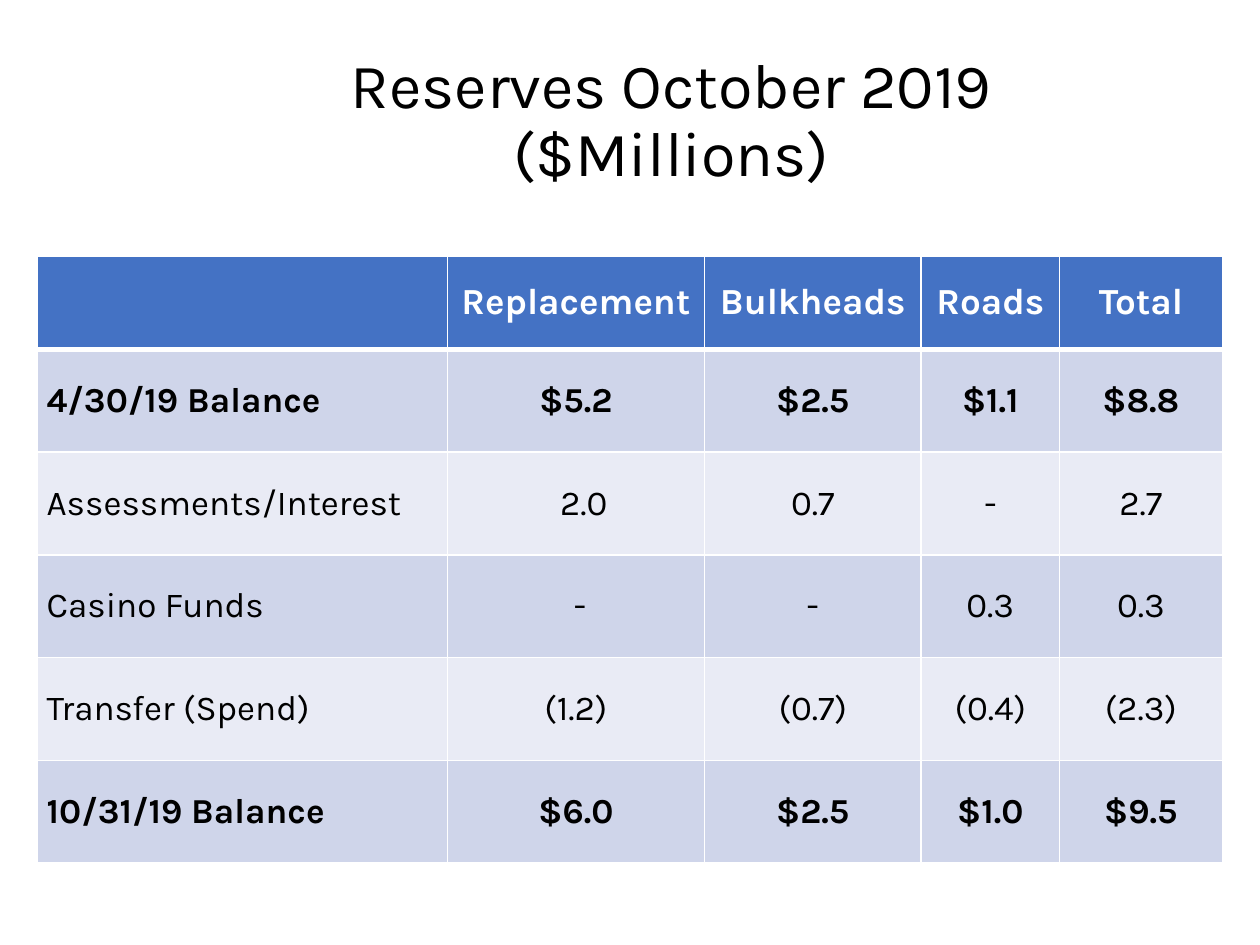
from dataclasses import dataclass

from lxml.etree import SubElement
from pptx import Presentation
from pptx.dml.color import RGBColor
from pptx.enum.text import MSO_ANCHOR, PP_ALIGN
from pptx.oxml.ns import qn
from pptx.util import Cm, Pt


@dataclass(frozen=True)
class Theme:
    font: str = "Karla"
    black: str = "000000"
    white: str = "FFFFFF"
    header: str = "4472C4"
    bands: tuple = ("E9EBF5", "CFD5EA")
    title_size: int = 36
    header_size: int = 21
    body_size: int = 20


THEME = Theme()

COLUMN_WIDTHS = (8.26, 5.18, 4.37, 2.79, 3.28)
HEADER_HEIGHT = 1.88
RESERVES = (
    ("", "Replacement", "Bulkheads", "Roads", "Total"),
    ("4/30/19 Balance", "$5.2", "$2.5", "$1.1", "$8.8"),
    ("Assessments/Interest", "2.0", "0.7", "-", "2.7"),
    ("Casino Funds", "-", "-", "0.3", "0.3"),
    ("Transfer (Spend)", "(1.2)", "(0.7)", "(0.4)", "(2.3)"),
    ("10/31/19 Balance", "$6.0", "$2.5", "$1.0", "$9.5"),
)
BALANCE_ROWS = (1, 5)
# Extra left margin in cm, by (row, column)
NUDGES = {(2, 1): 0.32, (3, 1): 0.16}


def style_paragraph(p, size, color, align, bold=False):
    p.alignment = align
    p.font.name = THEME.font
    p.font.size = Pt(size)
    p.font.bold = bold
    p.font.color.rgb = RGBColor.from_string(color)


def add_title(slide, left, top, width, height, text):
    tf = slide.shapes.add_textbox(Cm(left), Cm(top), Cm(width), Cm(height)).text_frame
    tf.word_wrap = True
    tf.vertical_anchor = MSO_ANCHOR.MIDDLE
    p = tf.paragraphs[0]
    p.text = text
    p.line_spacing = 0.9
    style_paragraph(p, THEME.title_size, THEME.black, PP_ALIGN.CENTER)


def set_borders(cell, top, bottom):
    """Draw white borders; top and bottom are widths in points, the sides 1."""
    tc_pr = cell._tc.get_or_add_tcPr()
    for side, width in (("L", 1), ("R", 1), ("T", top), ("B", bottom)):
        line = SubElement(tc_pr, qn(f"a:ln{side}"), w=str(Pt(width)))
        fill = SubElement(line, qn("a:solidFill"))
        SubElement(fill, qn("a:srgbClr"), val=THEME.white)


def fill_cell(cell, row, col, text):
    is_header = row == 0
    set_borders(cell, top=3 if row == 1 else 1, bottom=3 if is_header else 1)
    cell.fill.solid()
    fill = THEME.header if is_header else THEME.bands[row % 2]
    cell.fill.fore_color.rgb = RGBColor.from_string(fill)
    cell.vertical_anchor = MSO_ANCHOR.MIDDLE
    cell.margin_left = Cm(0.18 + NUDGES.get((row, col), 0))
    cell.margin_right = Cm(0.18)
    cell.margin_top = cell.margin_bottom = Cm(0.13)
    p = cell.text_frame.paragraphs[0]
    p.text = text
    style_paragraph(
        p,
        THEME.header_size if is_header else THEME.body_size,
        THEME.white if is_header else THEME.black,
        PP_ALIGN.CENTER if col else PP_ALIGN.LEFT,
        bold=is_header or row in BALANCE_ROWS,
    )


def add_reserves_table(slide, left, top, width, height):
    table = slide.shapes.add_table(
        len(RESERVES), len(COLUMN_WIDTHS), Cm(left), Cm(top), Cm(width), Cm(height)
    ).table
    for column, share in zip(table.columns, COLUMN_WIDTHS):
        column.width = Cm(width * share / sum(COLUMN_WIDTHS))
    body_height = (height - HEADER_HEIGHT) / (len(RESERVES) - 1)
    for row, values in enumerate(RESERVES):
        table.rows[row].height = Cm(body_height if row else HEADER_HEIGHT)
        for col, text in enumerate(values):
            fill_cell(table.cell(row, col), row, col, text)


def main():
    prs = Presentation()
    prs.slide_width, prs.slide_height = Cm(25.4), Cm(19.05)
    slide = prs.slides.add_slide(prs.slide_layouts[6])
    add_title(slide, 3.63, 1.65, 19.81, 1.63, "Reserves October 2019 ($Millions)")
    add_reserves_table(slide, 0.76, 5.16, 23.88, 12.24)
    prs.save("out.pptx")


if __name__ == "__main__":
    main()
